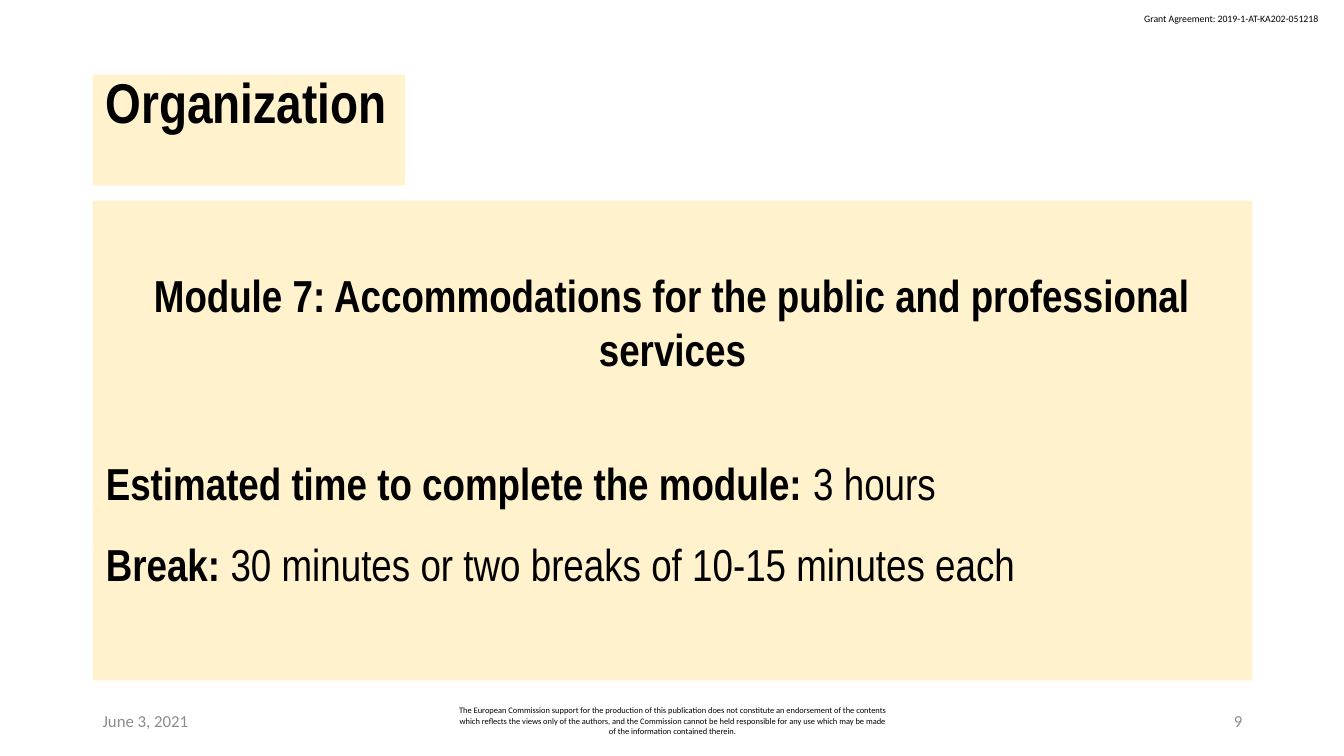
from pptx import Presentation
from pptx.dml.color import RGBColor
from pptx.enum.shapes import MSO_SHAPE
from pptx.enum.text import MSO_ANCHOR, PP_ALIGN
from pptx.util import Inches, Pt

RECTANGLE = MSO_SHAPE.RECTANGLE
TOP, MIDDLE = MSO_ANCHOR.TOP, MSO_ANCHOR.MIDDLE
LEFT, CENTER, RIGHT, JUSTIFY = (
    PP_ALIGN.LEFT, PP_ALIGN.CENTER, PP_ALIGN.RIGHT, PP_ALIGN.JUSTIFY)
BLACK = RGBColor(0x00, 0x00, 0x00)
GRAY = RGBColor(0x8C, 0x8C, 0x8C)
CREAM = RGBColor(0xFF, 0xF2, 0xCC)

GRANT = "Grant Agreement: 2019-1-AT-KA202-051218"
DISCLAIMER = (
    "The European Commission support for the production of this publication "
    "does not constitute an endorsement of the contents which reflects the "
    "views only of the authors, and the Commission cannot be held responsible "
    "for any use which may be made of the information contained therein.")

# text, left, top, width, height, alignment, anchor, wrap, size, colour
SMALL_TEXTS = [
    (GRANT, 11.25, 0.08, 1.97, 0.22, LEFT, TOP, False, 7, BLACK),
    ("June 3, 2021", 0.92, 6.95, 3, 0.4, LEFT, MIDDLE, True, 12, GRAY),
    (DISCLAIMER, 4.42, 6.95, 4.5, 0.4, CENTER, MIDDLE, True, 6, BLACK),
    ("9", 9.42, 6.95, 3, 0.4, RIGHT, MIDDLE, True, 12, GRAY),
]

# Paragraphs: bold text, regular text, paragraph format
TITLE = [("Organization", "", {"alignment": LEFT, "line_spacing": 0.9})]
BODY = [
    ("Module 7: Accommodations for the public and professional services", "",
     {"alignment": CENTER}),
    ("Estimated time to complete the module: ", "3 hours",
     {"alignment": JUSTIFY, "line_spacing": 1.5, "space_before": Pt(38)}),
    ("Break: ", "30 minutes or two breaks of 10-15 minutes each",
     {"alignment": JUSTIFY, "line_spacing": 1.5}),
]
# paragraphs, top, width, height, top margin, size
PANELS = [
    (TITLE, 0.74, 3.1, 1.1, 0.01, 40),
    (BODY, 1.99, 11.5, 4.76, 0.67, 32),
]
PANEL_LEFT = 0.92


def set_format(target, values):
    for name, value in values.items():
        setattr(target, name, value)


def add_run(paragraph, text, size, font_name, color, bold=False):
    run = paragraph.add_run()
    run.text = text
    set_format(run.font, {"size": Pt(size), "name": font_name, "bold": bold})
    run.font.color.rgb = color


def add_small_text(slide, text, left, top, width, height,
                   alignment, anchor, wrap, size, color):
    box = slide.shapes.add_textbox(*map(Inches, (left, top, width, height)))
    set_format(box.text_frame, {"word_wrap": wrap, "vertical_anchor": anchor})
    paragraph = box.text_frame.paragraphs[0]
    paragraph.alignment = alignment
    add_run(paragraph, text, size, "Calibri", color)


def add_panel(slide, paragraphs, top, width, height, margin_top, size):
    panel = slide.shapes.add_shape(
        RECTANGLE, *map(Inches, (PANEL_LEFT, top, width, height)))
    panel.shadow.inherit = False
    panel.fill.solid()
    panel.fill.fore_color.rgb = CREAM
    panel.line.fill.background()
    frame = panel.text_frame
    set_format(frame, {
        "word_wrap": True, "vertical_anchor": TOP,
        "margin_left": Inches(0.13), "margin_right": Inches(0.13),
        "margin_top": Inches(margin_top), "margin_bottom": Inches(0.07)})
    for index, (bold_text, regular_text, values) in enumerate(paragraphs):
        paragraph = frame.add_paragraph() if index else frame.paragraphs[0]
        set_format(paragraph, values)
        for text, bold in ((bold_text, True), (regular_text, False)):
            if text:
                add_run(paragraph, text, size, "Arial Narrow", BLACK, bold)


def main():
    presentation = Presentation()
    presentation.slide_width = Inches(13.33)
    presentation.slide_height = Inches(7.5)
    slide = presentation.slides.add_slide(presentation.slide_layouts[6])
    for small_text in SMALL_TEXTS:
        add_small_text(slide, *small_text)
    for panel in PANELS:
        add_panel(slide, *panel)
    presentation.save("out.pptx")


if __name__ == "__main__":
    main()
